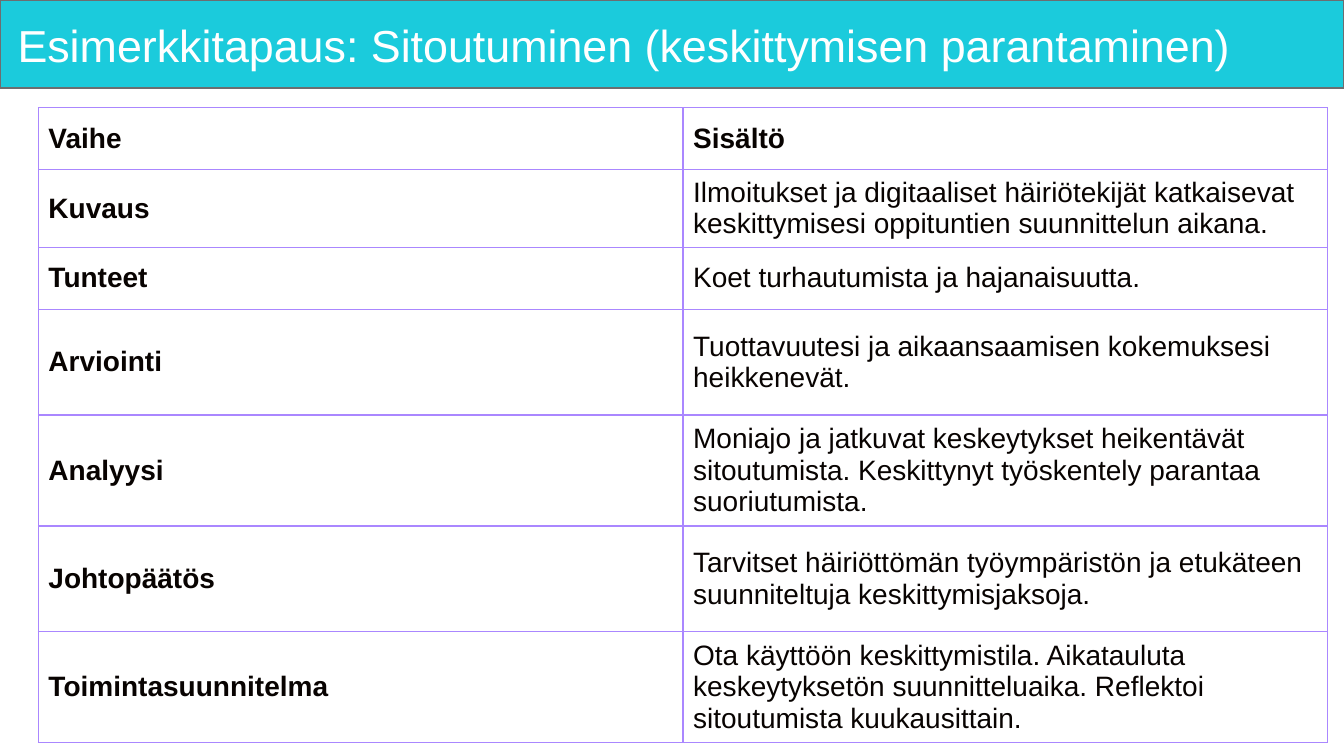
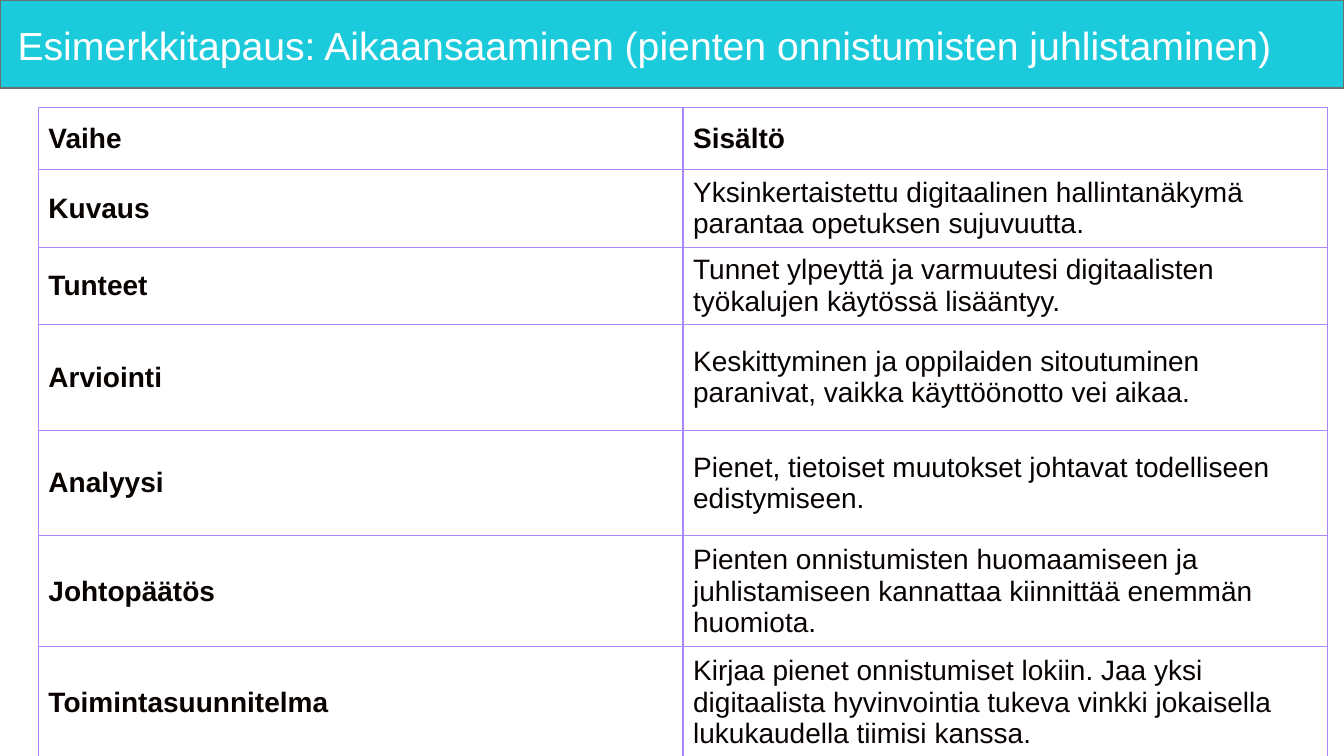
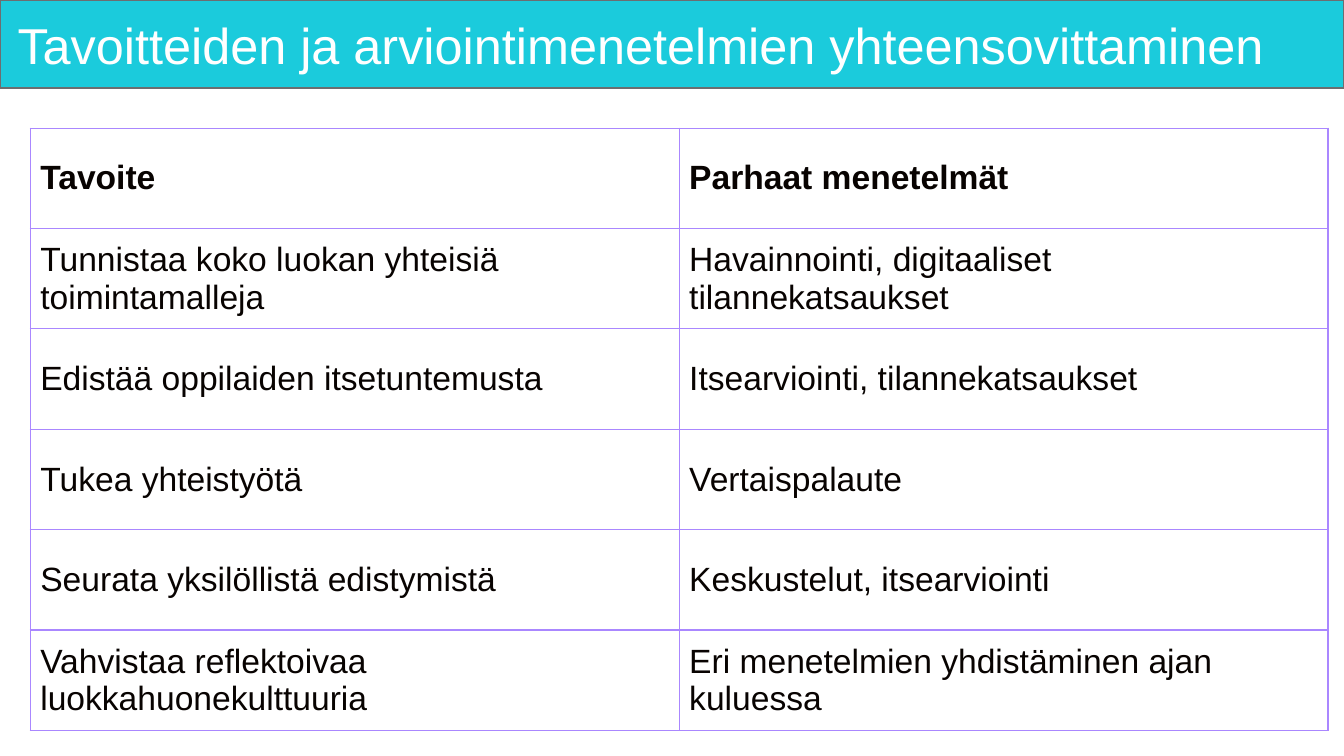
from dataclasses import dataclass
from typing import Any

from lxml import etree
from pptx import Presentation
from pptx import util as u
from pptx.dml.color import RGBColor
from pptx.enum import shapes, text
from pptx.oxml import ns


@dataclass(frozen=True)
class Theme:
    font: str = "Arial"
    band: str = "1BCBDC"
    band_line: str = "6C6E70"
    title: str = "FFFFFF"
    ink: str = "080301"
    border: str = "AA87FF"
    line_width: float = 1
    case_title_size: float = 32
    long_title_size: float = 28
    goal_title_size: float = 36
    case_size: float = 20
    goal_size: float = 24


@dataclass(frozen=True)
class Grid:
    left: float
    top: float
    width: float
    heights: tuple[float, ...]
    size: float
    bold_labels: bool


@dataclass(frozen=True)
class TableSlide:
    title: str
    title_size: float
    grid: Grid
    rows: list[tuple[str, str]]


THEME = Theme()
SLIDE_W, SLIDE_H = 960, 540

# Table layouts
CASE_GRID = Grid(27.4, 76.9, 921, (44.4,) * 3 + (75.5,) * 4, THEME.case_size, True)
GOAL_GRID = Grid(21.6, 91.5, 927, (71.7,) * 6, THEME.goal_size, False)

# Row labels shared by the case slides
STAGES = ("Vaihe", "Kuvaus", "Tunteet", "Arviointi", "Analyysi", "Johtopäätös",
          "Toimintasuunnitelma")


def case_rows(*contents: str) -> list[tuple[str, str]]:
    return list(zip(STAGES, ("Sisältö", *contents)))


SLIDES = [
    TableSlide(
        "Esimerkkitapaus: Sitoutuminen (keskittymisen parantaminen)",
        THEME.case_title_size, CASE_GRID,
        case_rows(
            "Ilmoitukset ja digitaaliset häiriötekijät katkaisevat keskittymisesi "
            "oppituntien suunnittelun aikana.",
            "Koet turhautumista ja hajanaisuutta.",
            "Tuottavuutesi ja aikaansaamisen kokemuksesi heikkenevät.",
            "Moniajo ja jatkuvat keskeytykset heikentävät sitoutumista. "
            "Keskittynyt työskentely parantaa suoriutumista.",
            "Tarvitset häiriöttömän työympäristön ja etukäteen suunniteltuja "
            "keskittymisjaksoja.",
            "Ota käyttöön keskittymistila. Aikatauluta keskeytyksetön "
            "suunnitteluaika. Reflektoi sitoutumista kuukausittain.",
        ),
    ),
    TableSlide(
        "Esimerkkitapaus: Aikaansaaminen (pienten onnistumisten juhlistaminen)",
        THEME.long_title_size, CASE_GRID,
        case_rows(
            "Yksinkertaistettu digitaalinen hallintanäkymä parantaa opetuksen "
            "sujuvuutta.",
            "Tunnet ylpeyttä ja varmuutesi digitaalisten työkalujen käytössä "
            "lisääntyy.",
            "Keskittyminen ja oppilaiden sitoutuminen paranivat, vaikka "
            "käyttöönotto vei aikaa.",
            "Pienet, tietoiset muutokset johtavat todelliseen edistymiseen.",
            "Pienten onnistumisten huomaamiseen ja juhlistamiseen kannattaa "
            "kiinnittää enemmän huomiota.",
            "Kirjaa pienet onnistumiset lokiin. Jaa yksi digitaalista hyvinvointia "
            "tukeva vinkki jokaisella lukukaudella tiimisi kanssa.",
        ),
    ),
    TableSlide(
        "Tavoitteiden ja arviointimenetelmien yhteensovittaminen",
        THEME.goal_title_size, GOAL_GRID,
        [
            ("Tavoite", "Parhaat menetelmät"),
            ("Tunnistaa koko luokan yhteisiä toimintamalleja",
             "Havainnointi, digitaaliset tilannekatsaukset"),
            ("Edistää oppilaiden itsetuntemusta", "Itsearviointi, tilannekatsaukset"),
            ("Tukea yhteistyötä", "Vertaispalaute"),
            ("Seurata yksilöllistä edistymistä", "Keskustelut, itsearviointi"),
            ("Vahvistaa reflektoivaa luokkahuonekulttuuria",
             "Eri menetelmien yhdistäminen ajan kuluessa"),
        ],
    ),
]


def set_attrs(target: Any, values: dict[str, Any]) -> None:
    for name, value in values.items():
        setattr(target, name, value)


def write(p: Any, content: str, size: float, color: str, bold: bool = False) -> None:
    r = p.add_run()
    r.text = content
    set_attrs(r.font, {"name": THEME.font, "size": u.Pt(size), "bold": bold})
    r.font.color.rgb = RGBColor.from_string(color)


# Band and title
def draw_header(s: Any, title: str, size: float) -> None:
    sp = s.shapes.add_shape(shapes.MSO_SHAPE.RECTANGLE, 0, 0, u.Pt(SLIDE_W), u.Pt(63))
    sp.shadow.inherit = False
    sp.fill.solid()
    sp.fill.fore_color.rgb = RGBColor.from_string(THEME.band)
    sp.line.color.rgb = RGBColor.from_string(THEME.band_line)
    sp.line.width = u.Pt(THEME.line_width)

    tf = s.shapes.add_textbox(u.Pt(8), u.Pt(6.5), u.Pt(940), u.Pt(56)).text_frame
    inset = u.Pt(4.5)
    set_attrs(tf, {
        "word_wrap": True, "vertical_anchor": text.MSO_ANCHOR.MIDDLE,
        "margin_left": inset, "margin_right": inset,
        "margin_top": inset, "margin_bottom": inset,
    })
    p = tf.paragraphs[0]
    p.line_spacing = 0.9
    write(p, title, size, THEME.title)


# Table cells
def add_borders(cell: Any) -> None:
    tc_pr = cell._tc.get_or_add_tcPr()
    for i, side in enumerate(("lnL", "lnR", "lnT", "lnB")):
        ln = etree.Element(ns.qn(f"a:{side}"), w=str(int(u.Pt(THEME.line_width))))
        fill = etree.SubElement(ln, ns.qn("a:solidFill"))
        etree.SubElement(fill, ns.qn("a:srgbClr"), val=THEME.border)
        tc_pr.insert(i, ln)


def draw_cell(cell: Any, content: str, size: float, bold: bool) -> None:
    set_attrs(cell, {
        "vertical_anchor": text.MSO_ANCHOR.MIDDLE,
        "margin_left": u.Pt(7.2), "margin_right": u.Pt(7.2),
        "margin_top": u.Pt(3.6), "margin_bottom": u.Pt(3.6),
    })
    cell.fill.background()
    add_borders(cell)
    write(cell.text_frame.paragraphs[0], content, size, THEME.ink, bold)


def draw_table(s: Any, grid: Grid, rows: list[tuple[str, str]]) -> None:
    cols = len(rows[0])
    table = s.shapes.add_table(
        len(rows), cols, u.Pt(grid.left), u.Pt(grid.top),
        u.Pt(grid.width), u.Pt(sum(grid.heights))).table
    set_attrs(table, {"first_row": False, "horz_banding": False})
    for col in table.columns:
        col.width = u.Pt(grid.width / cols)
    for i, (height, row) in enumerate(zip(grid.heights, rows)):
        table.rows[i].height = u.Pt(height)
        for j, content in enumerate(row):
            bold = i == 0 or (j == 0 and grid.bold_labels)
            draw_cell(table.cell(i, j), content, grid.size, bold)


def main() -> None:
    prs = Presentation()
    set_attrs(prs, {"slide_width": u.Pt(SLIDE_W), "slide_height": u.Pt(SLIDE_H)})
    for item in SLIDES:
        s = prs.slides.add_slide(prs.slide_layouts[6])
        draw_header(s, item.title, item.title_size)
        draw_table(s, item.grid, item.rows)
    prs.save("out.pptx")


if __name__ == "__main__":
    main()
